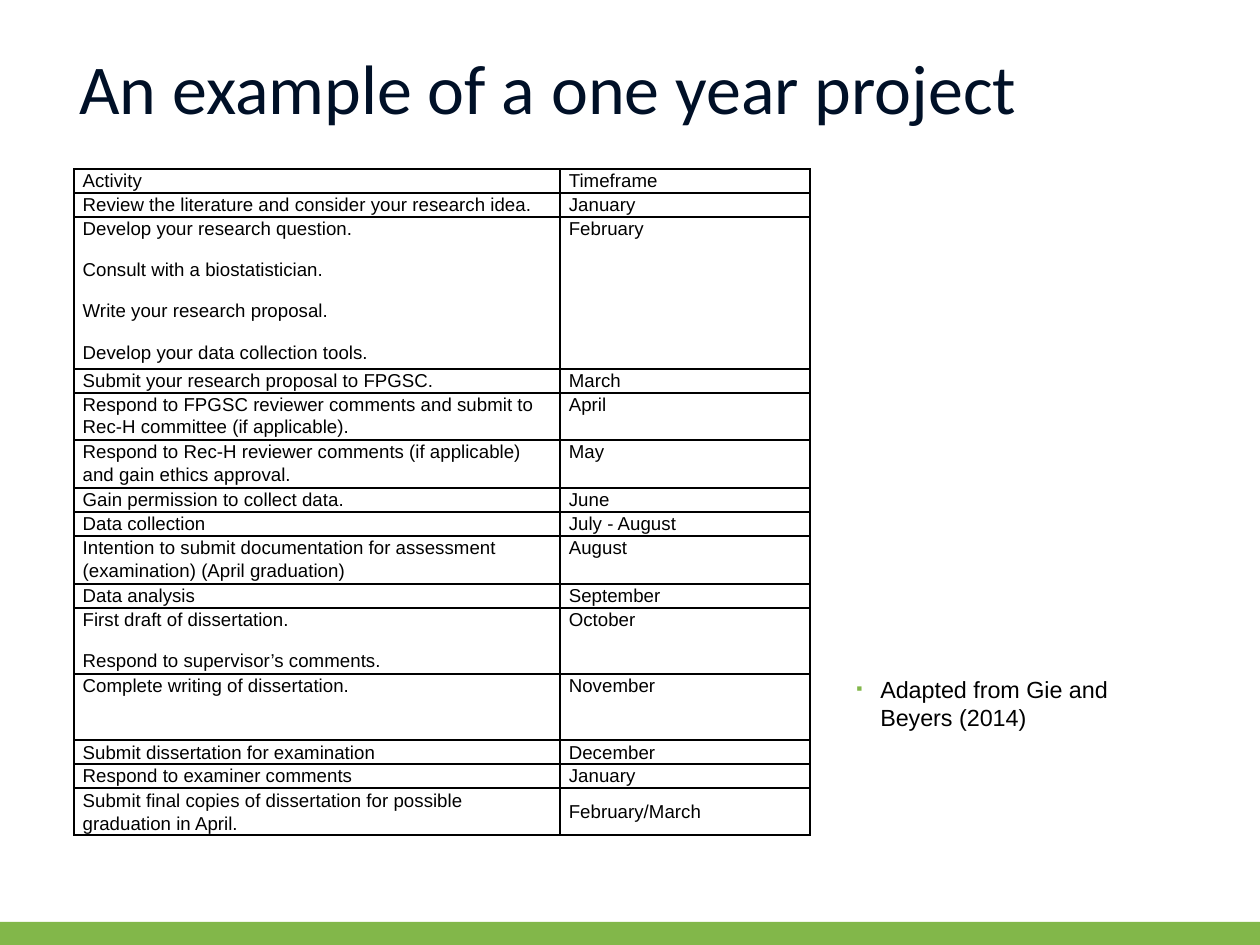
from dataclasses import dataclass

from lxml.etree import SubElement
from pptx import Presentation
from pptx.dml.color import RGBColor
from pptx.enum.shapes import MSO_SHAPE
from pptx.enum.text import MSO_ANCHOR
from pptx.oxml.ns import qn
from pptx.util import Cm, Pt


@dataclass(frozen=True)
class Theme:
    """Colours, fonts and type sizes of the deck."""
    ink: str = "000000"
    navy: str = "001027"
    green: str = "82B74A"
    head: str = "Calibri"
    body: str = "Arial"
    title: int = 30
    note: int = 10
    cell: int = 8
    rule: int = 1


class Deck:
    """Holds the theme and the current slide, and draws on it."""

    def __init__(self, theme, width, height):
        """Open a blank slide of the given size."""
        self.theme = theme
        self.deck = Presentation()
        self.deck.slide_width, self.deck.slide_height = Cm(width), Cm(height)
        self.slide = self.deck.slides.add_slide(self.deck.slide_layouts[6])

    def add_text(self, para, text, size, font, tint):
        """Add one styled run to a paragraph."""
        run = para.add_run()
        run.text = text
        run.font.size, run.font.name = Pt(size), font
        run.font.color.rgb = RGBColor.from_string(tint)

    def bar(self, *box):
        """Draw a plain green band."""
        shape = self.slide.shapes.add_shape(MSO_SHAPE.RECTANGLE, *map(Cm, box))
        shape.shadow.inherit = False
        shape.fill.solid()
        shape.fill.fore_color.rgb = RGBColor.from_string(self.theme.green)
        shape.line.fill.background()

    def frame(self, *box):
        """Add a wrapping text box and return its text frame."""
        frame = self.slide.shapes.add_textbox(*map(Cm, box)).text_frame
        frame.word_wrap = True
        return frame

    def title(self, text, *box):
        """Add the slide heading."""
        frame = self.frame(*box)
        frame.margin_top = Cm(0.18)
        look = self.theme
        self.add_text(frame.paragraphs[0], text, look.title, look.head, look.navy)

    def note(self, text, *box):
        """Add a remark with a small square bullet."""
        look = self.theme
        para = self.frame(*box).paragraphs[0]
        props = para._p.get_or_add_pPr()
        props.set("marL", str(Cm(0.36)))
        props.set("indent", str(-Cm(0.36)))
        tint = SubElement(props, qn("a:buClr"))
        SubElement(tint, qn("a:srgbClr"), val=look.green)
        SubElement(props, qn("a:buSzPct"), val="75000")
        SubElement(props, qn("a:buFont"), typeface=look.body)
        SubElement(props, qn("a:buChar"), char="▪")
        self.add_text(para, text, look.note, look.body, look.ink)

    def edge(self, cell):
        """Rule all four sides of a cell."""
        props = cell._tc.get_or_add_tcPr()
        for side in "LRTB":
            line = SubElement(props, qn(f"a:ln{side}"), w=str(Pt(self.theme.rule)))
            fill = SubElement(line, qn("a:solidFill"))
            SubElement(fill, qn("a:srgbClr"), val=self.theme.ink)

    def cell(self, cell, lines, anchor):
        """Fill one table cell with its paragraphs."""
        look = self.theme
        self.edge(cell)
        cell.fill.background()
        cell.margin_left = cell.margin_right = Cm(0.13)
        cell.margin_top = cell.margin_bottom = 0
        cell.vertical_anchor = anchor
        frame = cell.text_frame
        for i, text in enumerate(lines):
            para = frame.add_paragraph() if i else frame.paragraphs[0]
            para.line_spacing, para.space_after = 1.07, Pt(8)
            self.add_text(para, text, look.cell, look.body, look.ink)

    def table(self, rows, left, top, widths, middle):
        """Draw the plan; the last few rows are centred in height."""
        size = sum(widths), sum(row[0] for row in rows)
        box = map(Cm, (left, top, *size))
        grid = self.slide.shapes.add_table(len(rows), len(widths), *box).table
        grid.first_row = grid.horz_banding = False
        for col, width in zip(grid.columns, widths):
            col.width = Cm(width)
        for i, (height, tasks, month) in enumerate(rows):
            grid.rows[i].height = Cm(height)
            late = i >= len(rows) - middle
            anchor = MSO_ANCHOR.MIDDLE if late else MSO_ANCHOR.TOP
            self.cell(grid.cell(i, 0), tasks, anchor)
            self.cell(grid.cell(i, 1), [month], anchor)


ONE, TWO, GAP, FOUR = 0.35, 0.7, 0.99, 2.27
PLAN = [
    (ONE, ["Activity"], "Timeframe"),
    (ONE, ["Review the literature and consider your research idea."], "January"),
    (FOUR, ["Develop your research question.",
            "Consult with a biostatistician.",
            "Write your research proposal.",
            "Develop your data collection tools."], "February"),
    (ONE, ["Submit your research proposal to FPGSC."], "March"),
    (TWO, ["Respond to FPGSC reviewer comments and submit to "
           "Rec-H committee (if applicable)."], "April"),
    (TWO, ["Respond to Rec-H reviewer comments (if applicable) "
           "and gain ethics approval."], "May"),
    (ONE, ["Gain permission to collect data."], "June"),
    (ONE, ["Data collection"], "July - August"),
    (TWO, ["Intention to submit documentation for assessment "
           "(examination) (April graduation)"], "August"),
    (ONE, ["Data analysis"], "September"),
    (GAP, ["First draft of dissertation.",
           "Respond to supervisor’s comments."], "October"),
    (GAP, ["Complete writing of dissertation."], "November"),
    (ONE, ["Submit dissertation for examination"], "December"),
    (ONE, ["Respond to examiner comments"], "January"),
    (TWO, ["Submit final copies of dissertation for possible "
           "graduation in April."], "February/March"),
]


def main():
    """Build the slide and save it."""
    plan = Deck(Theme(), 19.05, 14.29)
    plan.bar(0, 13.94, 19.05, 0.35)
    plan.title("An example of a one year project", 0.95, 0.5, 17.15, 2.4)
    plan.table(PLAN, 1.12, 2.56, (7.35, 3.78), 3)
    plan.note("Adapted from Gie and Beyers (2014)", 12.7, 10.08, 4.8, 1.12)
    plan.deck.save("out.pptx")


if __name__ == "__main__":
    main()
